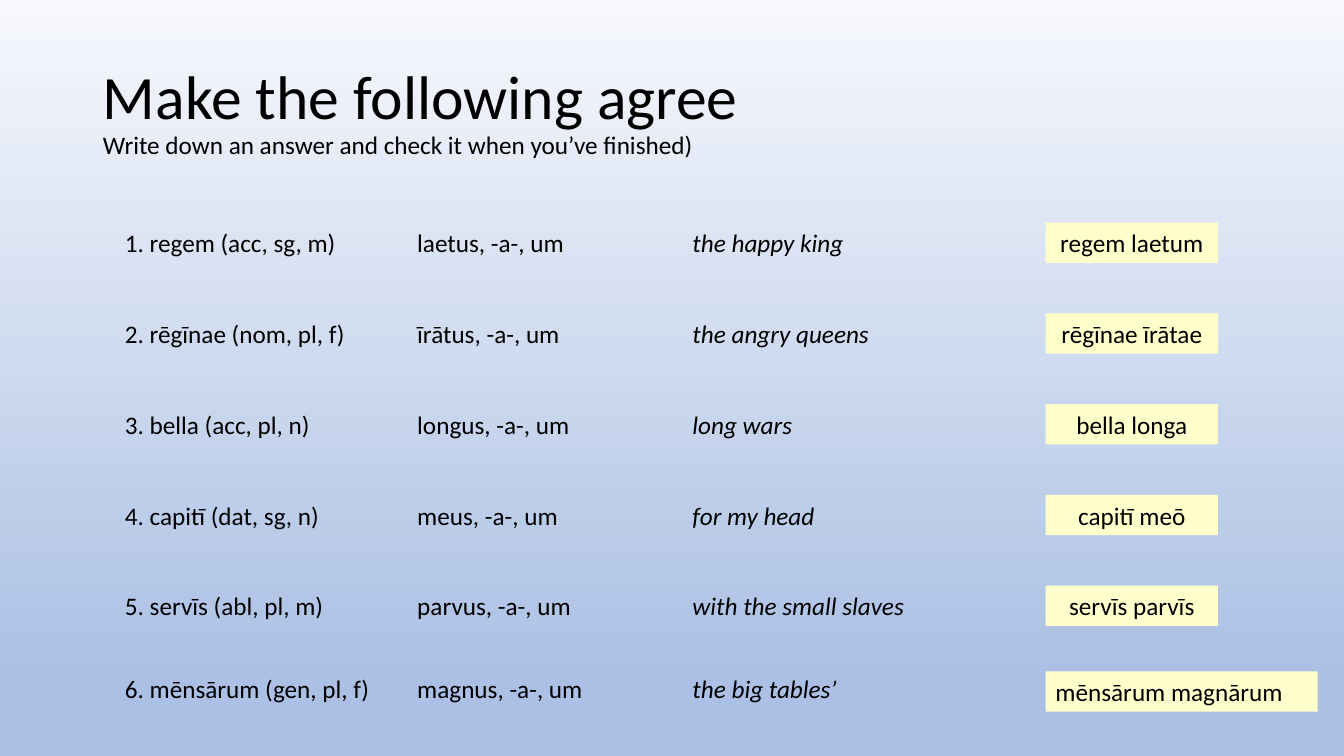
from pptx import Presentation
from pptx.dml.color import RGBColor
from pptx.enum.shapes import MSO_SHAPE
from pptx.enum.text import MSO_ANCHOR, PP_ALIGN
from pptx.util import Inches, Pt

RECTANGLE = MSO_SHAPE.RECTANGLE
MIDDLE, TOP = MSO_ANCHOR.MIDDLE, MSO_ANCHOR.TOP
LEFT, CENTER = PP_ALIGN.LEFT, PP_ALIGN.CENTER

FONT = "Calibri"
INK, ANSWER_FILL = "000000", "FFFFCC"
SKY_STOPS = [(0, "F6F8FC"), (0.9, "ABC0E4")]

ROW_HEIGHT, ROW_PITCH = 0.4, 0.9
FIRST_ROW, LAST_ROW = 2.21, 6.63
NOUN_LEFT, ADJECTIVE_LEFT, MEANING_LEFT, ANSWER_LEFT = 1.14, 4.04, 6.77, 10.37
ANSWER_WIDTH, LAST_ANSWER_WIDTH, LAST_ANSWER_DROP = 1.71, 2.7, 0.03

EXERCISES = [
    ("1. regem (acc, sg, m)", "laetus, -a-, um", "the happy king", "regem laetum"),
    ("2. rēgīnae (nom, pl, f)", "īrātus, -a-, um", "the angry queens", "rēgīnae īrātae"),
    ("3. bella (acc, pl, n)", "longus, -a-, um", "long wars", "bella longa"),
    ("4. capitī (dat, sg, n)", "meus, -a-, um", "for my head", "capitī meō"),
    ("5. servīs (abl, pl, m)", "parvus, -a-, um", "with the small slaves", "servīs parvīs"),
    ("6. mēnsārum (gen, pl, f)", "magnus, -a-, um", "the big tables’", "mēnsārum magnārum"),
]


def color(hex_string):
    """Turn a hex string into a colour."""
    return RGBColor.from_string(hex_string)


def write(paragraph, text, size=18, italic=False, align=LEFT):
    """Add a formatted run to a paragraph."""
    paragraph.alignment = align
    run = paragraph.add_run()
    run.text = text
    run.font.name = FONT
    run.font.size = Pt(size)
    run.font.italic = italic
    run.font.color.rgb = color(INK)


def paint_background(slide):
    """Fill the slide with a gradient running downwards."""
    fill = slide.background.fill
    fill.gradient()
    fill.gradient_angle = 270
    for stop, (position, shade) in zip(fill.gradient_stops, SKY_STOPS):
        stop.position = position
        stop.color.rgb = color(shade)


def add_heading(slide, left, top, width, height):
    """Place the title with its instruction on the line below."""
    heading = slide.shapes.title
    heading.left, heading.top = Inches(left), Inches(top)
    heading.width, heading.height = Inches(width), Inches(height)
    frame = heading.text_frame
    frame.word_wrap = True
    frame.vertical_anchor = MIDDLE
    paragraph = frame.paragraphs[0]
    paragraph.line_spacing = 0.9
    write(paragraph, "Make the following agree", size=44)
    paragraph.add_line_break()
    write(paragraph, "Write down an answer and check it when you’ve finished)")


def add_phrase(slide, text, left, top, width, italic=False):
    """Place one phrase of an exercise."""
    phrase = slide.shapes.add_textbox(
        Inches(left), Inches(top), Inches(width), Inches(ROW_HEIGHT))
    phrase.text_frame.word_wrap = True
    write(phrase.text_frame.paragraphs[0], text, italic=italic)


def add_answer(slide, text, left, top, width, align):
    """Place the highlighted answer of an exercise."""
    answer = slide.shapes.add_shape(
        RECTANGLE, Inches(left), Inches(top), Inches(width), Inches(ROW_HEIGHT))
    answer.shadow.inherit = False
    answer.fill.solid()
    answer.fill.fore_color.rgb = color(ANSWER_FILL)
    answer.line.fill.background()
    answer.text_frame.word_wrap = True
    answer.text_frame.vertical_anchor = TOP
    write(answer.text_frame.paragraphs[0], text, align=align)


def add_exercises(slide):
    """Lay out the exercises row by row, the last one closer and wider."""
    for index, (noun, adjective, meaning, answer) in enumerate(EXERCISES):
        is_last = index == len(EXERCISES) - 1
        top = LAST_ROW if is_last else FIRST_ROW + index * ROW_PITCH
        add_phrase(slide, noun, NOUN_LEFT, top, 2.7)
        add_phrase(slide, adjective, ADJECTIVE_LEFT, top, 1.93)
        add_phrase(slide, meaning, MEANING_LEFT, top, 2.34, italic=True)
        if is_last:
            add_answer(slide, answer, ANSWER_LEFT, top + LAST_ANSWER_DROP,
                       LAST_ANSWER_WIDTH, LEFT)
        else:
            add_answer(slide, answer, ANSWER_LEFT, top, ANSWER_WIDTH, CENTER)


def main():
    """Build and save the slide."""
    deck = Presentation()
    deck.slide_width, deck.slide_height = Inches(13.33), Inches(7.5)
    slide = deck.slides.add_slide(deck.slide_layouts.get_by_name("Title Only"))
    paint_background(slide)
    add_heading(slide, 0.92, 0.4, 11.73, 1.45)
    add_exercises(slide)
    deck.save("out.pptx")


if __name__ == "__main__":
    main()
